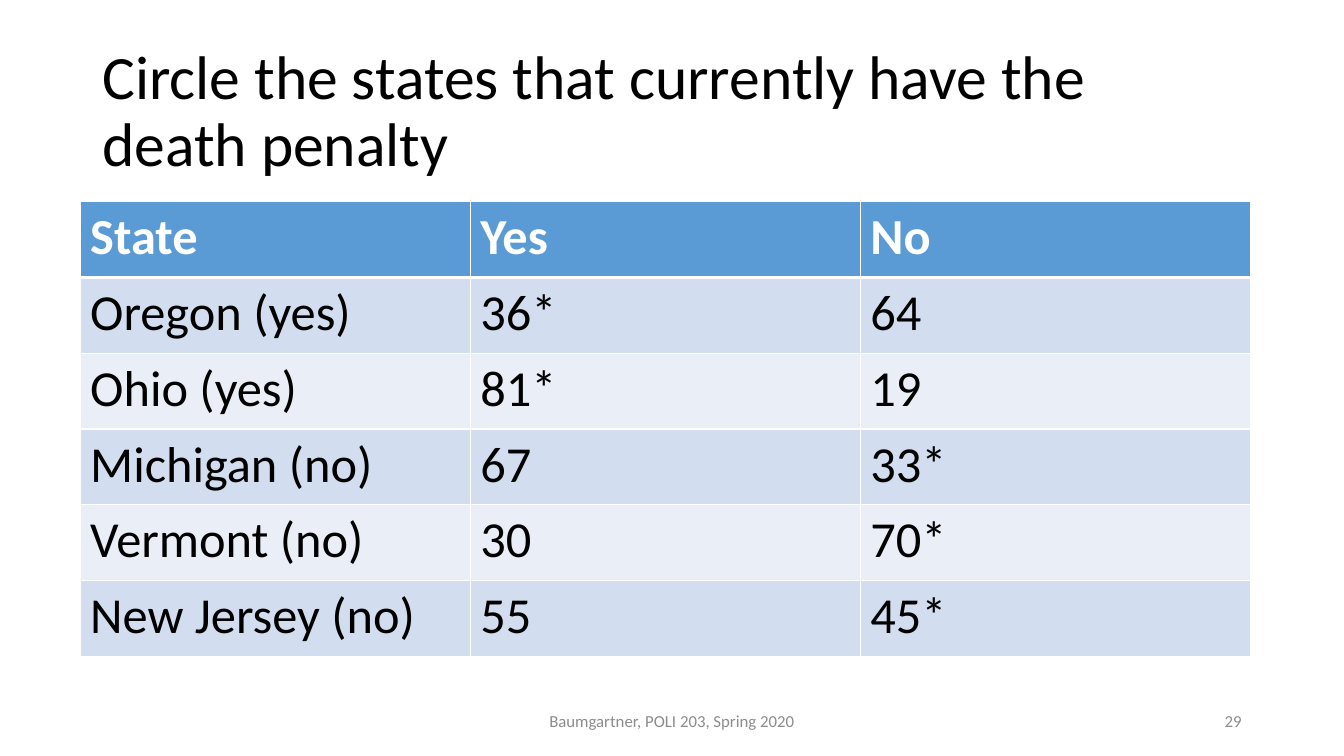
from lxml.etree import SubElement as Sub
from pptx import Presentation
from pptx.dml.color import RGBColor as Rgb
from pptx.enum.text import MSO_ANCHOR as Anchor, PP_ALIGN as Align
from pptx.oxml.ns import qn
from pptx.util import Cm, Pt

TEXTS = [
    ("Circle the states that currently have the death penalty",
     (2.33, 1.01, 29.21, 3.68), 44, "black", Align.LEFT, 0.9),
    ("Baumgartner, POLI 203, Spring 2020",
     (11.22, 17.66, 11.43, 1.01), 12, "gray", Align.CENTER, 1.0),
    ("29", (23.92, 17.66, 7.62, 1.01), 12, "gray", Align.RIGHT, 1.0),
]
ROWS = [
    ("State", "Yes", "No"),
    ("Oregon (yes)", "36*", "64"),
    ("Ohio (yes)", "81*", "19"),
    ("Michigan (no)", "67", "33*"),
    ("Vermont (no)", "30", "70*"),
    ("New Jersey (no)", "55", "45*"),
]
COLORS = {"black": "000000", "gray": "8C8C8C", "white": "FFFFFF",
          "head": "5B9BD5", "odd": "D2DEEF", "even": "EAEFF7"}
FONT = "Calibri"
LEFT, TOP, COL, ROW = 2.02, 5.08, 9.83, 1.91


def style(para, size, color, bold=False):
    font = para.font
    font.name, font.size, font.bold = FONT, Pt(size), bold
    font.color.rgb = Rgb.from_string(COLORS[color])


def add_text(slide, text, box, size, color, align, space):
    frame = slide.shapes.add_textbox(*map(Cm, box)).text_frame
    frame.word_wrap = True
    frame.vertical_anchor = Anchor.MIDDLE
    para = frame.paragraphs[0]
    para.text, para.alignment, para.line_spacing = text, align, space
    style(para, size, color)


def add_edges(cell, row):
    props = cell._tc.get_or_add_tcPr()
    thick = {0: "lnB", 1: "lnT"}.get(row)
    for side in ("lnL", "lnR", "lnT", "lnB"):
        width = Pt(3 if side == thick else 1)
        line = Sub(props, qn(f"a:{side}"), w=str(int(width)))
        fill = Sub(line, qn("a:solidFill"))
        Sub(fill, qn("a:srgbClr"), val=COLORS["white"])


def add_grid(slide):
    rows, cols = len(ROWS), len(ROWS[0])
    table = slide.shapes.add_table(
        rows, cols, Cm(LEFT), Cm(TOP), Cm(COL * cols), Cm(ROW * rows)).table
    for col in table.columns:
        col.width = Cm(COL)
    for r, row in enumerate(ROWS):
        table.rows[r].height = Cm(ROW)
        head = r == 0
        shade = "head" if head else "odd" if r % 2 else "even"
        for c, text in enumerate(row):
            cell = table.cell(r, c)
            add_edges(cell, r)
            cell.fill.solid()
            cell.fill.fore_color.rgb = Rgb.from_string(COLORS[shade])
            cell.text = text
            style(cell.text_frame.paragraphs[0], 36,
                  "white" if head else "black", head)


def main():
    deck = Presentation()
    deck.slide_width, deck.slide_height = Cm(33.87), Cm(19.05)
    slide = deck.slides.add_slide(deck.slide_layouts[6])
    for item in TEXTS:
        add_text(slide, *item)
    add_grid(slide)
    deck.save("out.pptx")


if __name__ == "__main__":
    main()
